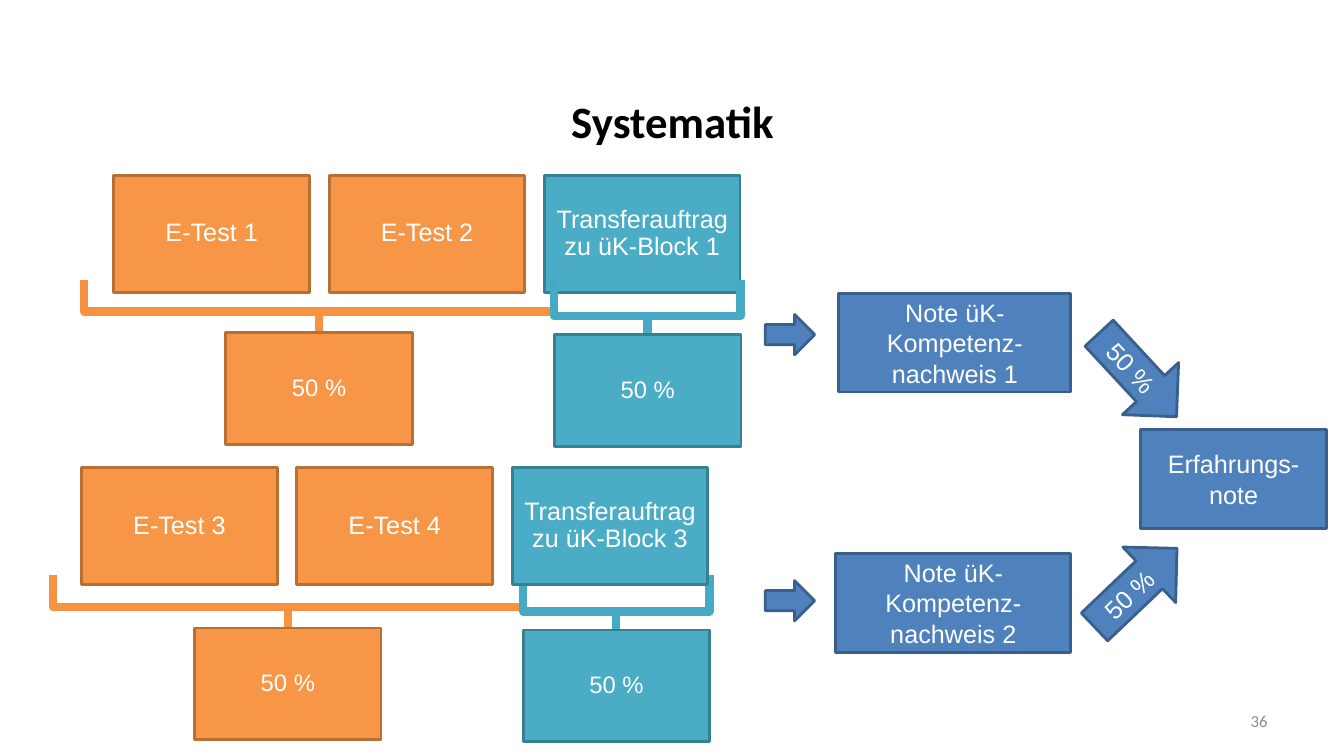
from dataclasses import dataclass

from pptx import Presentation
from pptx.dml.color import RGBColor
from pptx.enum.shapes import MSO_SHAPE
from pptx.enum.text import MSO_ANCHOR, PP_ALIGN
from pptx.shapes.autoshape import Shape
from pptx.slide import Slide
from pptx.util import Inches, Pt

RECT = MSO_SHAPE.RECTANGLE
ARROW = MSO_SHAPE.RIGHT_ARROW
BRACE = MSO_SHAPE.RIGHT_BRACE
MIDDLE = MSO_ANCHOR.MIDDLE
CENTER = PP_ALIGN.CENTER
RIGHT = PP_ALIGN.RIGHT


@dataclass(frozen=True)
class Tone:
    fill: str
    line: str
    brace: str = ""


@dataclass(frozen=True)
class Theme:
    orange: Tone = Tone("F79646", "B76F34", "F69240")
    teal: Tone = Tone("4BACC6", "377F92", "46AAC5")
    blue: Tone = Tone("4F81BD", "3A5F8C")
    white: str = "FFFFFF"
    black: str = "000000"
    grey: str = "8C8C8C"
    body_font: str = "Arial"
    title_font: str = "Calibri"
    title_size: int = 32
    body_size: int = 18
    share_size: int = 17
    number_size: int = 12
    outline: int = 2
    brace_line: int = 6


THEME = Theme()


@dataclass(frozen=True)
class Box:
    left: float
    top: float
    width: float
    height: float


@dataclass(frozen=True)
class Block:
    """One course block: its tests, and the offset of its weights from block 1."""
    tests: tuple[str, str, str]
    tests_left: float
    tests_top: float
    dx: float
    dy: float
    weights_behind: bool


@dataclass(frozen=True)
class Node:
    text: str
    box: Box
    kind: MSO_SHAPE = RECT
    rotation: float = 0


BLOCKS = (
    Block(("E-Test 1", "E-Test 2", "Transferauftrag zu üK-Block 1"),
          1.13, 1.74, 0, 0, False),
    Block(("E-Test 3", "E-Test 4", "Transferauftrag zu üK-Block 3"),
          0.81, 4.64, -0.31, 2.93, True),
)
TEST_TONES = (THEME.orange, THEME.orange, THEME.teal)
TEST_STEP = 2.135
WEIGHTS = (
    (THEME.orange, Box(2.85, 0.76, 0.63, 4.66), Box(2.24, 3.3, 1.85, 1.11)),
    (THEME.teal, Box(6.06, 2.21, 0.72, 1.85), Box(5.5, 3.32, 1.85, 1.11)),
)
GRADES = (
    Node("Note üK-Kompetenz-nachweis 1", Box(8.32, 2.91, 2.3, 0.98)),
    Node("Note üK-Kompetenz-nachweis 2", Box(8.29, 5.49, 2.33, 0.98)),
    Node("", Box(7.59, 3.12, 0.49, 0.4), ARROW),
    Node("", Box(7.59, 5.76, 0.49, 0.4), ARROW),
    Node("Erfahrungs-\nnote", Box(11.31, 4.26, 1.85, 0.98)),
    Node("50 %", Box(10.7, 5.45, 1.13, 0.76), ARROW, 316.4),
    Node("50 %", Box(10.72, 3.34, 1.13, 0.76), ARROW, 47.2),
)


def rgb(value: str) -> RGBColor:
    return RGBColor.from_string(value)


def lengths(box: Box) -> tuple[int, int, int, int]:
    return Inches(box.left), Inches(box.top), Inches(box.width), Inches(box.height)


def write(shape: Shape, text: str, size: int, color: str, font: str,
          align: PP_ALIGN = CENTER, bold: bool = False) -> None:
    tf = shape.text_frame
    tf.word_wrap = True
    tf.vertical_anchor = MIDDLE
    tf.text = text
    for p in tf.paragraphs:
        p.alignment = align
        for r in p.runs:
            r.font.name = font
            r.font.size = Pt(size)
            r.font.bold = bold
            r.font.color.rgb = rgb(color)


def add_filled(s: Slide, kind: MSO_SHAPE, box: Box, tone: Tone,
               text: str = "", size: int = THEME.body_size) -> Shape:
    sp = s.shapes.add_shape(kind, *lengths(box))
    sp.shadow.inherit = False
    sp.fill.solid()
    sp.fill.fore_color.rgb = rgb(tone.fill)
    sp.line.color.rgb = rgb(tone.line)
    sp.line.width = Pt(THEME.outline)
    if text:
        write(sp, text, size, THEME.white, THEME.body_font)
    return sp


def add_card(s: Slide, box: Box, tone: Tone, text: str, size: int) -> None:
    """Add a test or weight box, with tight margins and line spacing."""
    sp = add_filled(s, RECT, box, tone, text, size)
    tf = sp.text_frame
    tf.margin_left = tf.margin_right = Inches(0.07)
    tf.margin_top = tf.margin_bottom = Inches(0.07)
    tf.paragraphs[0].line_spacing = 0.9


def add_brace(s: Slide, box: Box, tone: Tone) -> None:
    """Add a square-cornered brace that opens upwards."""
    sp = s.shapes.add_shape(BRACE, *lengths(box))
    sp.shadow.inherit = False
    sp.rotation = 90
    sp.adjustments[0] = 0
    sp.adjustments[1] = 0.5
    sp.fill.background()
    sp.line.color.rgb = rgb(tone.brace)
    sp.line.width = Pt(THEME.brace_line)


def add_tests(s: Slide, block: Block) -> None:
    for i, (text, tone) in enumerate(zip(block.tests, TEST_TONES)):
        box = Box(block.tests_left + i * TEST_STEP, block.tests_top, 1.94, 1.16)
        add_card(s, box, tone, text, THEME.body_size)


def add_weights(s: Slide, block: Block) -> None:
    def moved(box: Box) -> Box:
        return Box(box.left + block.dx, box.top + block.dy, box.width, box.height)

    for tone, brace, _ in WEIGHTS:
        add_brace(s, moved(brace), tone)
    for tone, _, share in WEIGHTS:
        add_card(s, moved(share), tone, "50 %", THEME.share_size)


def main() -> None:
    prs = Presentation()
    prs.slide_width, prs.slide_height = Inches(13.33), Inches(7.5)
    s = prs.slides.add_slide(prs.slide_layouts[6])

    title = s.shapes.add_textbox(*lengths(Box(0.67, 0.84, 12, 0.71)))
    write(title, "Systematik", THEME.title_size, THEME.black, THEME.title_font, bold=True)
    for block in BLOCKS:
        steps = (add_tests, add_weights)
        for step in reversed(steps) if block.weights_behind else steps:
            step(s, block)
    for node in GRADES:
        sp = add_filled(s, node.kind, node.box, THEME.blue, node.text)
        sp.rotation = node.rotation
    number = s.shapes.add_textbox(*lengths(Box(9.56, 6.95, 3.11, 0.4)))
    write(number, "36", THEME.number_size, THEME.grey, THEME.title_font, RIGHT)

    prs.save("out.pptx")


if __name__ == "__main__":
    main()
